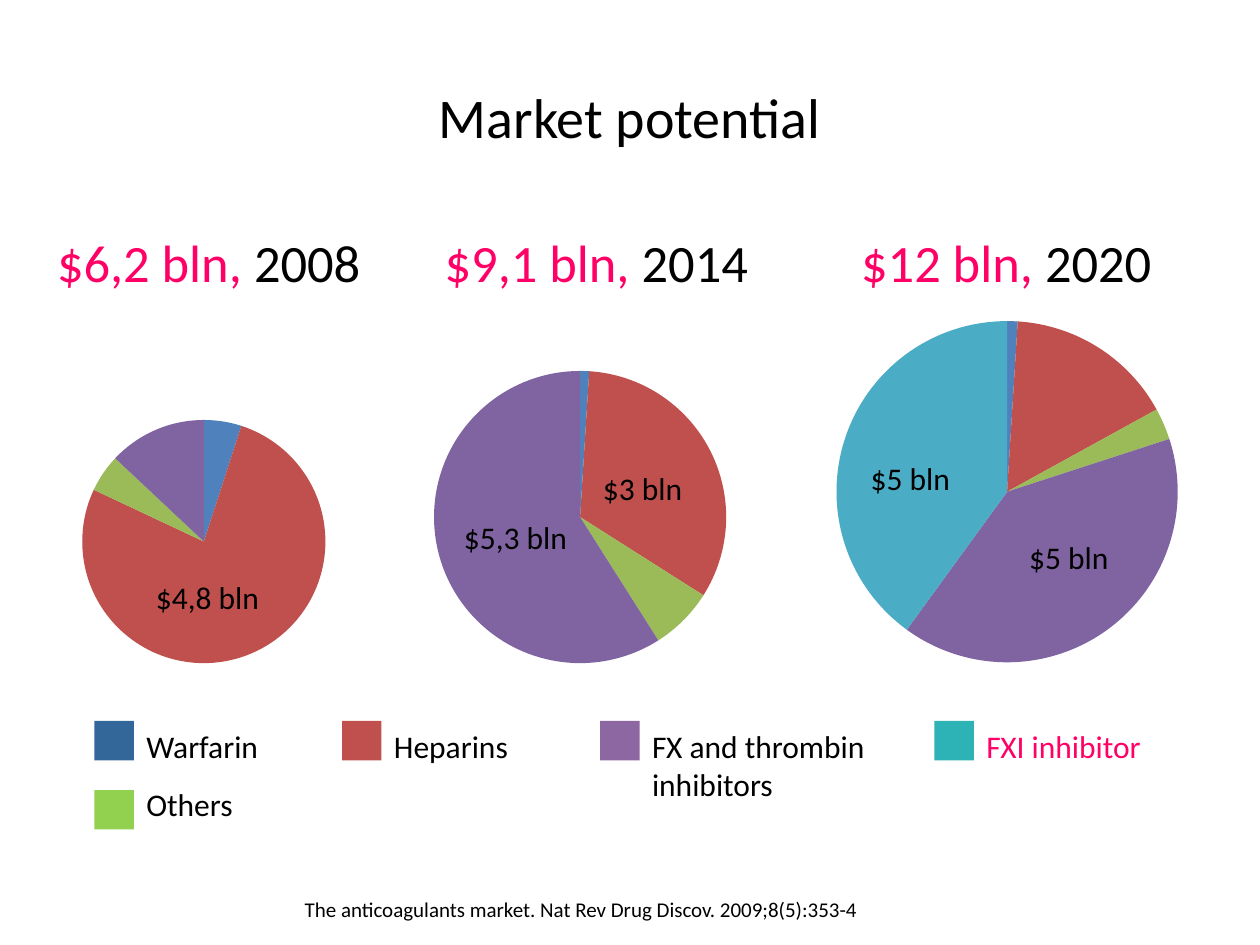
from lxml import etree
from pptx import Presentation
from pptx.chart.data import CategoryChartData
from pptx.dml.color import RGBColor
from pptx.enum.chart import XL_CHART_TYPE
from pptx.enum.shapes import MSO_SHAPE
from pptx.enum.text import MSO_ANCHOR, PP_ALIGN
from pptx.oxml.ns import qn
from pptx.util import Pt

FONT = "Calibri"
BLACK, PINK = "000000", "FF0066"
SLICE_COLORS = ["4F81BD", "C0504D", "9BBB59", "8064A2", "4BACC6"]
PIE_MARGIN = 10
SWATCH_SIZE = 22.5

# left, top, width, height, values
PIES = [
    (37, 230, 159, 159, [5, 77, 5, 13]),
    (209.5, 202, 244, 187, [1, 33, 7, 59]),
    (468, 173.5, 215, 215, [1, 16, 3, 40, 40]),
]
# left, width, market size, year
HEADINGS = [
    (25.5, 190, "$6,2 bln, ", "2008"),
    (247, 190, "$9,1 bln, ", "2014"),
    (485, 182, "$12 bln, ", "2020"),
]
# left, top, text
SLICE_LABELS = [
    (82, 327, "$4,8 bln"),
    (258, 292.5, "$5,3 bln"),
    (337.5, 264.5, "$3 bln"),
    (490.5, 258.5, "$5 bln"),
    (581, 304, "$5 bln"),
]
# left, swatch top, label top, swatch color, text color, text
LEGEND = [
    (54, 412, 412, "336699", BLACK, "Warfarin"),
    (195.5, 412, 412, "C0504D", BLACK, "Heparins"),
    (343, 412, 412, "8C67A1", BLACK, "FX and thrombin\ninhibitors"),
    (534, 412, 412, "2DB2B5", PINK, "FXI inhibitor"),
    (54, 451.5, 445, "92D050", BLACK, "Others"),
]


def rgb(color):
    return RGBColor.from_string(color)


def add_run(paragraph, text, size, color):
    run = paragraph.add_run()
    run.text = text
    run.font.name = FONT
    run.font.size = Pt(size)
    run.font.color.rgb = rgb(color)


def add_text(slide, text, left, top, width, height, size=18, color=BLACK,
             ending="", wrap=False, align=PP_ALIGN.LEFT, anchor=MSO_ANCHOR.TOP):
    """Add a text box; a black ending may follow the colored text."""
    box = slide.shapes.add_textbox(Pt(left), Pt(top), Pt(width), Pt(height))
    frame = box.text_frame
    frame.word_wrap = wrap
    frame.vertical_anchor = anchor
    for index, line in enumerate(text.split("\n")):
        paragraph = frame.add_paragraph() if index else frame.paragraphs[0]
        paragraph.alignment = align
        add_run(paragraph, line, size, color)
    if ending:
        add_run(paragraph, ending, size, BLACK)


def add_swatch(slide, left, top, color):
    shape = slide.shapes.add_shape(MSO_SHAPE.RECTANGLE, Pt(left), Pt(top),
                                   Pt(SWATCH_SIZE), Pt(SWATCH_SIZE))
    shape.shadow.inherit = False
    shape.fill.solid()
    shape.fill.fore_color.rgb = rgb(color)
    shape.line.fill.background()


def set_plot_area(chart, width, height):
    """Keep the same margin around the pie on every side."""
    plot_area = chart.plots[0]._element.getparent()
    for old_layout in plot_area.findall(qn("c:layout")):
        plot_area.remove(old_layout)
    layout = etree.Element(qn("c:layout"))
    manual = etree.SubElement(layout, qn("c:manualLayout"))
    settings = {
        "layoutTarget": "inner", "xMode": "edge", "yMode": "edge",
        "x": PIE_MARGIN / width, "y": PIE_MARGIN / height,
        "w": 1 - 2 * PIE_MARGIN / width, "h": 1 - 2 * PIE_MARGIN / height,
    }
    for name, value in settings.items():
        etree.SubElement(manual, qn(f"c:{name}")).set("val", str(value))
    plot_area.insert(0, layout)


def add_pie(slide, left, top, width, height, values):
    data = CategoryChartData()
    data.categories = [str(number + 1) for number in range(len(values))]
    data.add_series("Series 1", values)
    chart = slide.shapes.add_chart(XL_CHART_TYPE.PIE, Pt(left), Pt(top),
                                   Pt(width), Pt(height), data).chart
    chart.has_legend = False
    chart.has_title = False
    chart.font.name = FONT
    chart.font.size = Pt(10)
    chart.font.color.rgb = rgb(BLACK)
    plot = chart.plots[0]
    plot.vary_by_categories = True
    for index, color in enumerate(SLICE_COLORS[:len(values)]):
        point = plot.series[0].points[index]
        point.format.fill.solid()
        point.format.fill.fore_color.rgb = rgb(color)
        point.format.line.fill.background()
    set_plot_area(chart, width, height)


def main():
    presentation = Presentation()
    presentation.slide_width, presentation.slide_height = Pt(720), Pt(540)
    slide = presentation.slides.add_slide(presentation.slide_layouts[6])

    # Title
    add_text(slide, "Market potential", 36, 21.5, 648, 90, size=32, wrap=True,
             align=PP_ALIGN.CENTER, anchor=MSO_ANCHOR.MIDDLE)

    # Pies with their headings and slice labels
    for pie in PIES:
        add_pie(slide, *pie)
    for left, width, amount, year in HEADINGS:
        add_text(slide, amount, left, 128, width, 44, size=30, color=PINK,
                 ending=year)
    for left, top, text in SLICE_LABELS:
        add_text(slide, text, left, top, 74 if "," in text else 60.5, 29)

    # Legend
    for left, swatch_top, label_top, color, text_color, text in LEGEND:
        add_swatch(slide, left, swatch_top, color)
        add_text(slide, text, left + SWATCH_SIZE, label_top, 142, 29,
                 color=text_color)

    # Reference
    add_text(slide, "The anticoagulants market. Nat Rev Drug Discov. 2009;8(5):353-4",
             167, 508.5, 516, 22, size=12, wrap=True)

    presentation.save("out.pptx")


if __name__ == "__main__":
    main()
